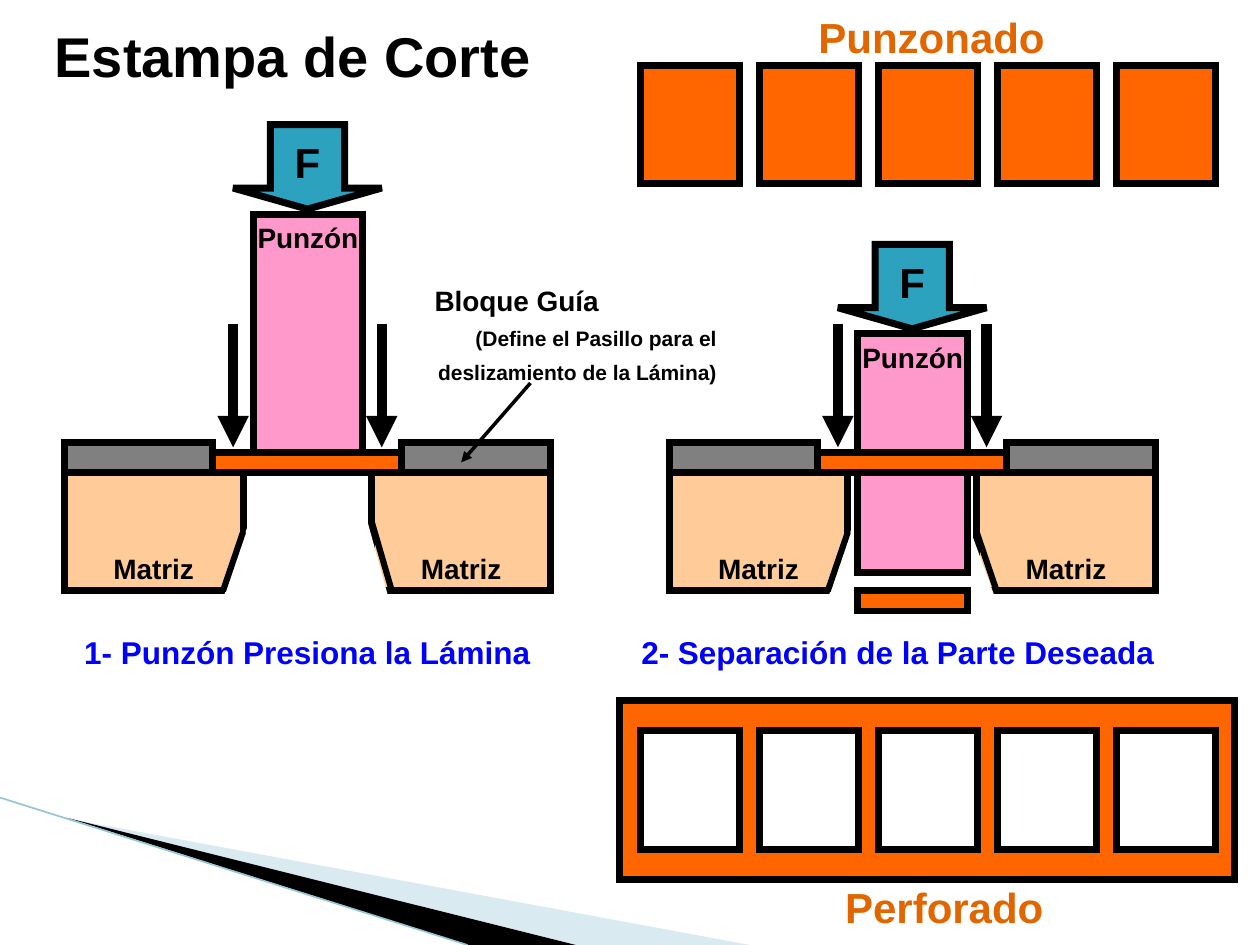
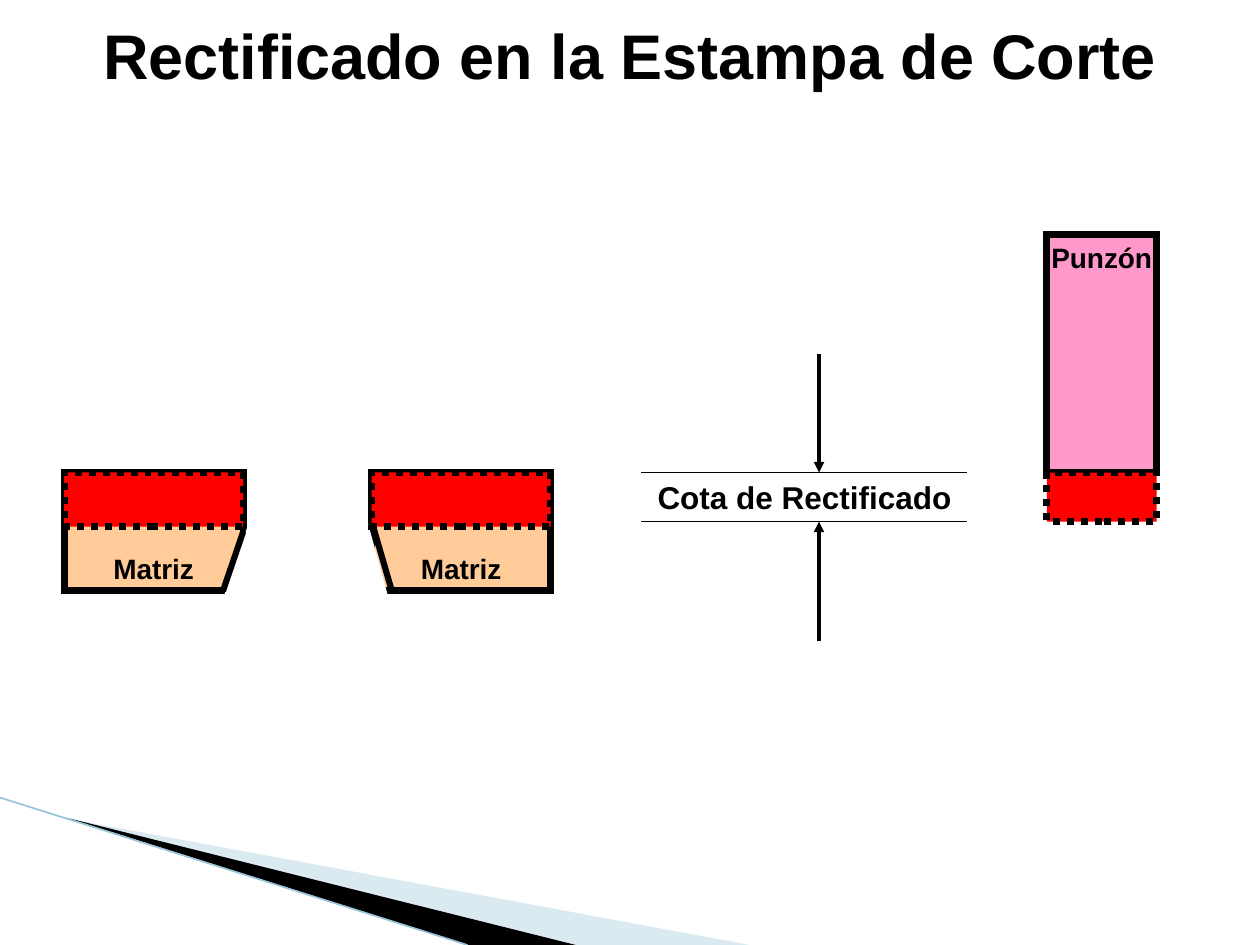
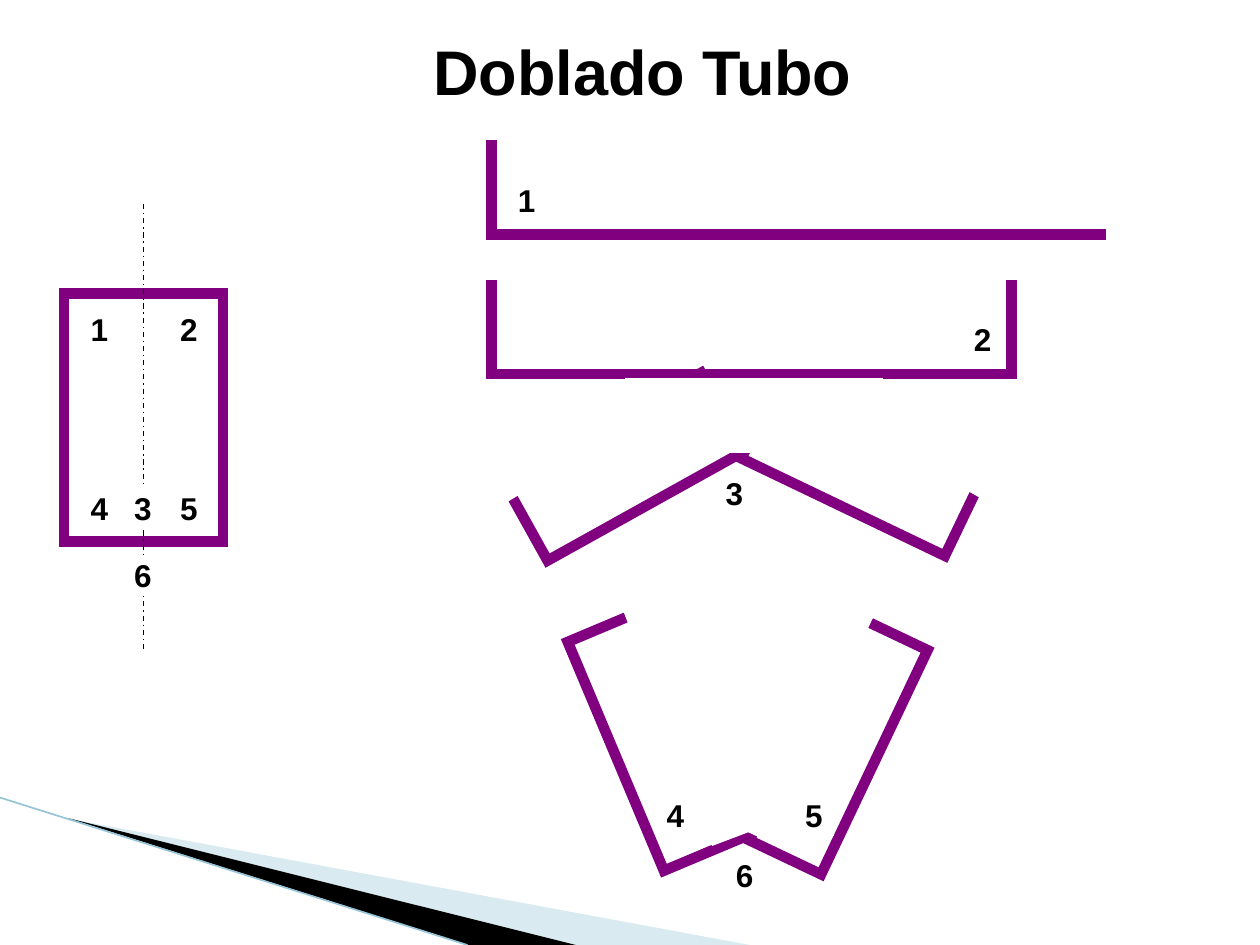
"""Build three slides on cutting dies and tube bending."""
from lxml.etree import SubElement
from pptx import Presentation
from pptx.dml.color import RGBColor
from pptx.enum.dml import MSO_LINE
from pptx.enum.shapes import MSO_CONNECTOR, MSO_SHAPE
from pptx.enum.text import MSO_ANCHOR, PP_ALIGN
from pptx.oxml.ns import qn
from pptx.util import Inches, Pt

COLORS = {
    "black": "000000", "white": "FFFFFF", "pale": "A0CBDC", "edge": "97C5D8",
    "die": "FFCC99", "punch": "FF99CC", "sheet": "FF6600", "guide": "808080",
    "force": "2DA2BF", "caption": "0000FF", "heading": "E26600",
    "wear": "FF0000", "tube": "800080",
}
FONT = "Arial"


def color(name):
    return RGBColor.from_string(COLORS[name])


def write(shape, text, size=16, ink="black", align=PP_ALIGN.CENTER,
          anchor=MSO_ANCHOR.MIDDLE, wrap=False, spacing=None):
    frame = shape.text_frame
    paragraph = frame.add_paragraph() if frame.text else frame.paragraphs[0]
    frame.word_wrap = wrap
    frame.vertical_anchor = anchor
    paragraph.alignment = align
    paragraph.line_spacing = spacing
    run = paragraph.add_run()
    run.text = text
    run.font.name, run.font.size, run.font.bold = FONT, Pt(size), True
    run.font.color.rgb = color(ink)


class Deck:
    def __init__(self):
        self.presentation = Presentation()
        self.presentation.slide_width = Inches(10)
        self.presentation.slide_height = Inches(7.5)
        self.slide = None

    def new_slide(self):
        self.slide = self.presentation.slides.add_slide(self.presentation.slide_layouts[6])
        band = self.outline([(0.55, 6.5), (5.95, 7.5), (4.56, 7.5)], "pale")
        choice = band.fill._xPr.find(qn("a:solidFill"))[0]
        SubElement(choice, qn("a:alpha"), val="40000")
        self.outline([(0.53, 6.49), (4.57, 7.5), (3.72, 7.5)], "black")
        self.line((0, 6.33), (3.71, 7.5), 0.95, ink="edge")

    def outline(self, points, fill):
        corners = [(Inches(x), Inches(y)) for x, y in points]
        builder = self.slide.shapes.build_freeform(*corners[0])
        builder.add_line_segments(corners[1:], close=True)
        shape = builder.convert_to_shape()
        shape.shadow.inherit = False
        shape.fill.solid()
        shape.fill.fore_color.rgb = color(fill)
        shape.line.fill.background()
        return shape

    def line(self, start, end, width, ink="black", arrow=False, dash=None):
        connector = self.slide.shapes.add_connector(
            MSO_CONNECTOR.STRAIGHT, *map(Inches, start + end))
        SubElement(connector._element.spPr, qn("a:effectLst"))
        connector.line.color.rgb = color(ink)
        connector.line.width = Pt(width)
        if dash:
            connector.line.dash_style = dash
        if arrow:
            SubElement(connector.line._get_or_add_ln(), qn("a:tailEnd"), type="triangle")

    def box(self, left, top, width, height, fill="white", ink="black", weight=4,
            kind=MSO_SHAPE.RECTANGLE, rotation=0, dash=None, flip=False):
        shape = self.slide.shapes.add_shape(kind, *map(Inches, (left, top, width, height)))
        shape.shadow.inherit = False
        shape.fill.solid()
        shape.fill.fore_color.rgb = color(fill)
        shape.line.color.rgb = color(ink)
        shape.line.width = Pt(weight)
        shape.rotation = rotation
        if dash:
            shape.line.dash_style = dash
        SubElement(shape.line._get_or_add_ln(), qn("a:miter"), lim="800000")
        if flip:
            shape._element.spPr.find(qn("a:xfrm")).set("flipH", "1")
        return shape

    def mask(self, left, top, width, height, weight=6, **options):
        return self.box(left, top, width, height, ink="white", weight=weight, **options)

    def label(self, place, text, size, **options):
        shape = self.mask(*place, weight=0.75)
        write(shape, text, size, wrap=True, spacing=0.8, **options)

    def number(self, text, left, top, width=0.24, height=0.24):
        write(self.mask(left, top, width, height), text, 18)

    def tube(self, left, top, width, height, rotation=0):
        self.box(left, top, width, height, ink="tube", weight=6, rotation=rotation)

    def punch(self, left, top):
        write(self.box(left, top, 0.87, 1.89, "punch"), "Punzón", anchor=MSO_ANCHOR.TOP)

    def dies(self, left):
        for offset in (0, 2.44):
            write(self.box(left + offset, 3.75, 1.42, 0.94, "die"), "Matriz",
                  anchor=MSO_ANCHOR.BOTTOM)

    def reliefs(self, left, notch_top=3.99, notch_width=0.24, edge_top=4.14):
        triangle = MSO_SHAPE.RIGHT_TRIANGLE
        self.mask(left + 1.26, 4.06, 0.24, 0.71, 0.75, kind=triangle, flip=True)
        self.mask(left + 2.36, notch_top, notch_width, 0.87, 0.75, kind=triangle)
        self.line((left + 1.42, 4.22), (left + 1.26, 4.69), 3.5)
        self.line((left + 2.44, edge_top), (left + 2.6, 4.69), 3.5)

    def force(self, left, top):
        for offset in (0, 1.18):
            self.line((left + offset, 2.57), (left + offset, 3.55), 6, arrow=True)
        arrow = self.box(left, top, 1.18, 0.67, "force", kind=MSO_SHAPE.DOWN_ARROW)
        arrow.adjustments[0], arrow.adjustments[1] = 0.5, 0.25
        write(arrow, "F", 24)

    def guides(self, left):
        for offset in (0, 2.68):
            self.box(left + offset, 3.51, 1.18, 0.24, "guide")

    def blanks(self, top, fill):
        for index in range(5):
            self.box(5.08 + 0.945 * index, top, 0.79, 0.94, fill)


def cutting_slide(deck):
    deck.new_slide()
    first, second = 0.51, 5.31
    deck.dies(first)
    deck.box(1.53, 3.59, 1.81, 0.16, "sheet")
    deck.punch(2.01, 1.7)
    deck.reliefs(first)
    deck.force(1.85, 0.99)
    deck.dies(second)
    deck.reliefs(second, notch_top=4.14, notch_width=0.32, edge_top=4.22)
    deck.box(6.81, 4.69, 0.87, 0.16, "sheet")
    deck.punch(6.81, 2.65)
    deck.force(6.65, 1.94)
    deck.label((0.51, 4.93, 3.86, 0.55), "1- Punzón Presiona la Lámina", 18, ink="caption")
    deck.label((4.92, 4.93, 4.41, 0.55), "2- Separación de la Parte Deseada", 18, ink="caption")
    deck.box(6.34, 3.59, 1.81, 0.16, "sheet")
    deck.box(4.92, 5.56, 4.88, 1.42, "sheet")
    deck.guides(first)
    deck.guides(second)
    deck.blanks(5.8, "white")
    deck.blanks(0.52, "sheet")
    heading = {"ink": "heading", "align": PP_ALIGN.RIGHT}
    deck.label((6.57, 7.11, 1.81, 0.24), "Perforado", 24, **heading)
    deck.label((6.34, 0.21, 2.05, 0.24), "Punzonado", 24, **heading)
    deck.label((0.2, 0.21, 4.25, 0.55), "Estampa de Corte", 32)
    note = deck.mask(3.35, 2.1, 2.52, 1.1, 0.75)
    note.text_frame.margin_right = Inches(0.18)
    write(note, "Bloque Guía", align=PP_ALIGN.LEFT, wrap=True, spacing=Pt(19.5))
    write(note, "(Define el Pasillo para el deslizamiento de la Lámina)", 12,
          align=PP_ALIGN.RIGHT, wrap=True, spacing=Pt(19.5))
    deck.line((4.21, 3.04), (3.66, 3.67), 2, arrow=True)


def grinding_slide(deck):
    deck.new_slide()
    deck.dies(0.51)
    deck.reliefs(0.51)
    deck.punch(8.31, 1.86)
    deck.label((0, 0.21, 10, 0.55), "Rectificado en la Estampa de Corte", 36)
    for left, width, height in ((0.51, 1.42, 0.43), (2.95, 1.42, 0.43), (8.31, 0.87, 0.39)):
        deck.box(left, 3.75, width, height, "wear", dash=MSO_LINE.ROUND_DOT)
    write(deck.box(4.69, 3.75, 3.39, 0.39, weight=0.5), "Cota de Rectificado", 18)
    for left in (4.61, 7.68):
        deck.mask(left, 3.59, 0.47, 0.79, 0.5)
    for start, end in ((2.81, 3.75), (5.09, 4.14)):
        deck.line((6.5, start), (6.5, end), 2, arrow=True)


def bending_slide(deck):
    deck.new_slide()
    title = deck.slide.shapes.add_textbox(*map(Inches, (0.2, 0.21, 9.8, 0.7)))
    write(title, "Doblado Tubo", 36, anchor=MSO_ANCHOR.TOP, wrap=True)

    deck.tube(0.51, 2.33, 1.26, 1.97)
    deck.line((1.14, 1.62), (1.14, 5.17), 0.75, dash=MSO_LINE.DASH_DOT)
    for text, left, top in (("1", 0.67, 2.49), ("2", 1.38, 2.49),
                            ("4", 0.67, 3.91), ("5", 1.38, 3.91)):
        deck.number(text, left, top)
    deck.number("3", 0.98, 3.91, 0.31)
    deck.number("6", 0.98, 4.46, 0.31, 0.2)

    deck.tube(3.9, 0.99, 5.04, 0.87)
    deck.mask(3.74, 0.91, 5.9, 0.16)
    deck.mask(8.78, 0.84, 0.55, 1.1, 0.75)
    deck.number("1", 4.06, 1.47)
    deck.tube(3.9, 2.1, 4.13, 0.87)
    deck.mask(3.82, 2.02, 5.9, 0.16)
    deck.number("2", 7.68, 2.57)

    deck.number("3", 5.71, 3.83, height=0.16)
    deck.tube(4.6, 2.81, 0.71, 1.79, 60.9)
    deck.tube(6.49, 2.81, 0.71, 1.79, 115.6)
    deck.mask(3.78, 3.37, 1.26, 0.31, rotation=329)
    deck.mask(6.91, 3.52, 1.25, 0.23, rotation=29.4)
    deck.mask(5, 3.04, 1.97, 0.51)

    deck.tube(4.86, 4.88, 0.71, 1.97, 337.2)
    deck.tube(6.34, 4.93, 0.63, 1.97, 25.4)
    deck.mask(6.11, 4.7, 0.39, 1.93, rotation=25.4)
    deck.mask(5.32, 4.71, 0.47, 1.93, rotation=339.3)
    for text, left, top in (("4", 5.24, 6.35), ("5", 6.34, 6.35), ("6", 5.79, 6.82)):
        deck.number(text, left, top)


def main():
    deck = Deck()
    cutting_slide(deck)
    grinding_slide(deck)
    bending_slide(deck)
    deck.presentation.save("out.pptx")


if __name__ == "__main__":
    main()
